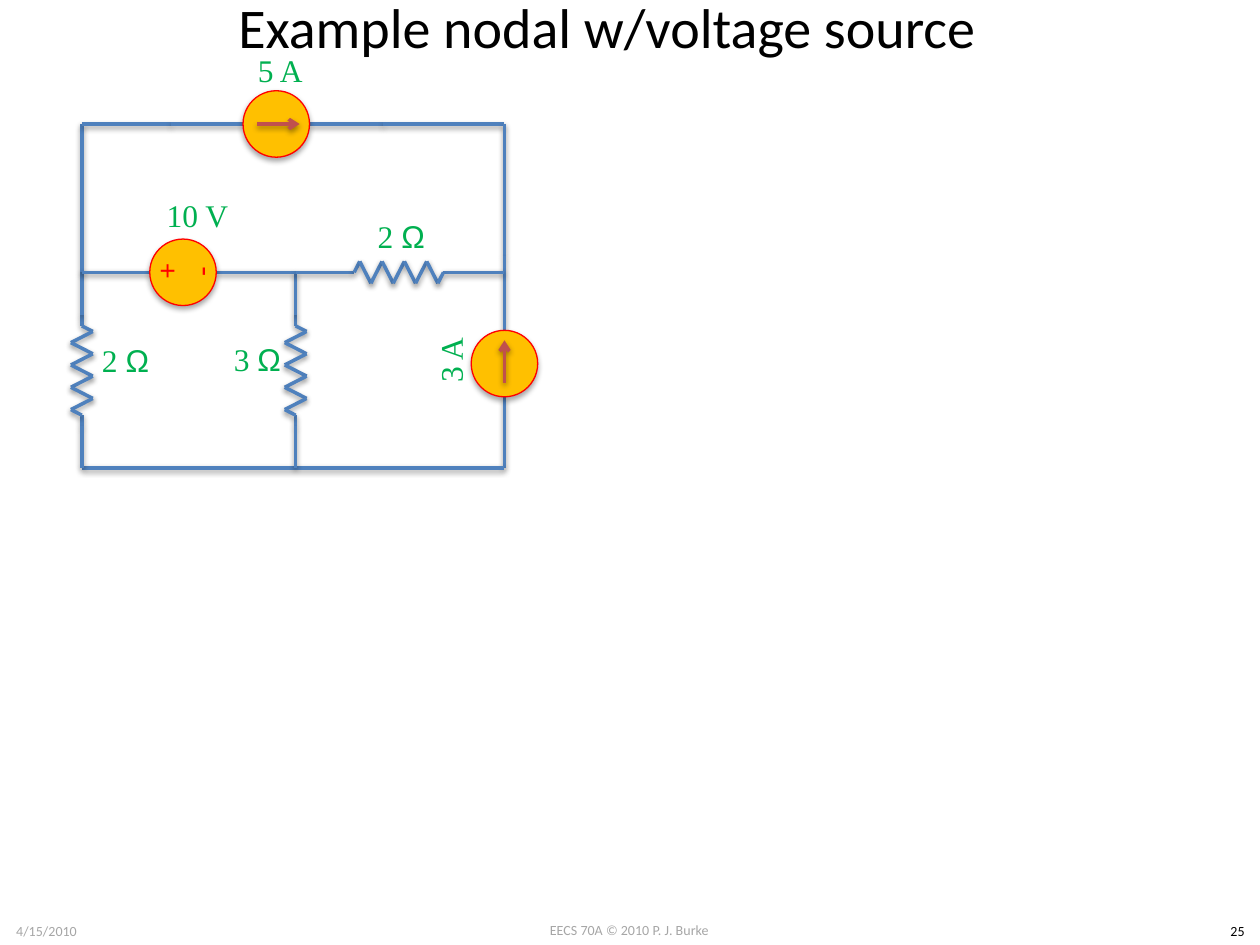
"""Build a slide showing a nodal analysis circuit with a voltage source."""
from dataclasses import dataclass
from itertools import pairwise
from typing import NamedTuple

from lxml.etree import SubElement
from pptx import Presentation
from pptx.dml.color import RGBColor
from pptx.enum.shapes import MSO_CONNECTOR, MSO_SHAPE
from pptx.enum.text import MSO_ANCHOR, PP_ALIGN
from pptx.oxml.ns import qn
from pptx.util import Cm, Pt


@dataclass(frozen=True)
class Theme:
    wire: RGBColor = RGBColor(0x4F, 0x81, 0xBD)
    arrow: RGBColor = RGBColor(0xC0, 0x50, 0x4D)
    source: RGBColor = RGBColor(0xFF, 0xC0, 0x00)
    outline: RGBColor = RGBColor(0xFF, 0x00, 0x00)
    label: RGBColor = RGBColor(0x00, 0xB0, 0x50)
    footer: RGBColor = RGBColor(0xA6, 0xA6, 0xA6)
    ink: RGBColor = RGBColor(0x00, 0x00, 0x00)
    sans: str = "Calibri"
    serif: str = "Times New Roman"
    symbol: str = "Arial"
    title_size: float = 32
    label_size: float = 18
    plus_size: float = 16.6
    footer_size: float = 8
    wire_width: float = 2
    outline_width: float = 0.75


class Point(NamedTuple):
    x: float
    y: float


class Resistor(NamedTuple):
    start: Point
    vertical: bool


class Caption(NamedTuple):
    text: str
    center: Point
    width: float
    height: float
    size: float
    font: str
    color: RGBColor
    rotation: float = 0
    unit: str = ""


THEME = Theme()
LEFT, MIDDLE, RIGHT = 1.65, 5.96, 10.17
TOP, CENTER, BOTTOM = 2.5, 5.49, 9.43
RADIUS, SWING, ZIGZAG, TEETH = 0.67, 0.22, 1.8, 8
ZIG_TOP, ZIG_LEFT, STUB = 6.57, 7.14, 0.22
ZIG_BOTTOM = ZIG_TOP + ZIGZAG

VOLTAGE = Point(3.69, CENTER)
CURRENT_TOP = Point(5.57, TOP)
CURRENT_RIGHT = Point(RIGHT, 7.33)

RESISTORS = [
    Resistor(Point(LEFT, ZIG_TOP), True),
    Resistor(Point(MIDDLE, ZIG_TOP), True),
    Resistor(Point(ZIG_LEFT, CENTER), False),
]

WIRES = [
    [Point(LEFT, ZIG_TOP), Point(LEFT, ZIG_TOP - STUB), Point(LEFT, CENTER),
     Point(LEFT, TOP), Point(3.45, TOP), Point(CURRENT_TOP.x - RADIUS, TOP)],
    [Point(CURRENT_TOP.x + RADIUS, TOP), Point(7.72, TOP), Point(RIGHT, TOP),
     Point(RIGHT, 5.16), Point(RIGHT, CURRENT_RIGHT.y - RADIUS)],
    [Point(RIGHT, CURRENT_RIGHT.y + RADIUS), Point(RIGHT, BOTTOM)],
    [Point(LEFT, BOTTOM), Point(RIGHT, BOTTOM)],
    [Point(MIDDLE, ZIG_TOP), Point(MIDDLE, ZIG_TOP - STUB), Point(MIDDLE, CENTER)],
    [Point(LEFT, CENTER), Point(VOLTAGE.x - RADIUS, CENTER)],
    [Point(VOLTAGE.x + RADIUS, CENTER), Point(MIDDLE, CENTER), Point(ZIG_LEFT, CENTER)],
    [Point(ZIG_LEFT + ZIGZAG, CENTER), Point(RIGHT, CENTER)],
    *[[Point(x, ZIG_BOTTOM), Point(x, ZIG_BOTTOM + STUB), Point(x, BOTTOM)]
      for x in (LEFT, MIDDLE)],
]


def value(text: str, x: float, y: float, unit: str = "", rotation: float = 0) -> Caption:
    """Describe the label of a circuit element."""
    return Caption(text, Point(x, y), 3.02, 1.85, THEME.label_size, THEME.serif,
                   THEME.label, rotation, unit)


def sign(text: str, x: float, size: float) -> Caption:
    """Describe a polarity sign in the voltage source."""
    return Caption(text, Point(x, 5.47), 0.66, 0.84, size, THEME.sans, THEME.outline, 270)


def footer(text: str, x: float, y: float, width: float, color: RGBColor) -> Caption:
    """Describe one entry of the footer."""
    return Caption(text, Point(x, y), width, 0.61, THEME.footer_size, THEME.sans, color)


CAPTIONS = [
    value("2 ", 2.53, 7.25, unit="Ω"),
    value("3 ", 5.19, 7.23, unit="Ω"),
    value("2 ", 8.09, 4.76, unit="Ω"),
    value("10 V", 3.98, 4.33),
    value("3 A", 9.08, 7.25, rotation=270),
    value("5 A", 5.65, 1.41),
    sign("+", 3.33, THEME.plus_size),
    sign("-", 4.04, THEME.label_size),
    footer("EECS 70A © 2010 P. J. Burke", 12.69, 18.75, 5.92, THEME.footer),
    footer("4/15/2010", 0.94, 18.77, 1.88, THEME.footer),
    footer("25", 24.95, 18.77, 0.89, THEME.ink),
]


def add_shadow(shape, distance: int, opacity: int) -> None:
    """Give a shape a soft shadow that falls straight down."""
    effects = SubElement(shape.element.spPr, qn("a:effectLst"))
    shadow = SubElement(effects, qn("a:outerShdw"), blurRad="40000", dist=str(distance),
                        dir="5400000", rotWithShape="0")
    color = SubElement(shadow, qn("a:srgbClr"), val="000000")
    SubElement(color, qn("a:alpha"), val=str(opacity))


def draw_line(page, start: Point, end: Point, color: RGBColor, arrow: bool = False) -> None:
    """Draw one straight line, with an arrowhead at its end if asked."""
    line = page.shapes.add_connector(MSO_CONNECTOR.STRAIGHT, Cm(start.x), Cm(start.y),
                                     Cm(end.x), Cm(end.y))
    line.line.color.rgb = color
    line.line.width = Pt(THEME.wire_width)
    if arrow:
        SubElement(line.line._get_or_add_ln(), qn("a:tailEnd"), type="arrow")
    add_shadow(line, 20000, 38000)


def draw_wire(page, points: list[Point]) -> None:
    """Join successive points with wire."""
    for start, end in pairwise(points):
        draw_line(page, start, end, THEME.wire)


def draw_resistor(page, resistor: Resistor) -> None:
    """Draw the zigzag of a resistor."""
    step = ZIGZAG / TEETH
    offsets = [(0, 0), *[((tooth + 0.5) * step, SWING * (-1) ** tooth)
                         for tooth in range(TEETH)], (ZIGZAG, 0)]
    x, y = resistor.start
    draw_wire(page, [Point(x + side, y + along) if resistor.vertical
                     else Point(x + along, y - side) for along, side in offsets])


def draw_source(page, center: Point) -> None:
    """Draw the circle of a source."""
    circle = page.shapes.add_shape(MSO_SHAPE.OVAL, Cm(center.x - RADIUS), Cm(center.y - RADIUS),
                                   Cm(2 * RADIUS), Cm(2 * RADIUS))
    circle.fill.solid()
    circle.fill.fore_color.rgb = THEME.source
    circle.line.color.rgb = THEME.outline
    circle.line.width = Pt(THEME.outline_width)
    add_shadow(circle, 23000, 35000)


def draw_caption(page, caption: Caption) -> None:
    """Write a caption centred on its point."""
    box = page.shapes.add_textbox(Cm(caption.center.x - caption.width / 2),
                                  Cm(caption.center.y - caption.height / 2),
                                  Cm(caption.width), Cm(caption.height))
    box.rotation = caption.rotation
    frame = box.text_frame
    frame.word_wrap = True
    frame.vertical_anchor = MSO_ANCHOR.MIDDLE
    frame.margin_left = frame.margin_right = frame.margin_top = frame.margin_bottom = 0
    para = frame.paragraphs[0]
    para.alignment = PP_ALIGN.CENTER
    para.font.size = Pt(caption.size)
    para.font.color.rgb = caption.color
    para.font.name = caption.font
    for text, font in ((caption.text, caption.font), (caption.unit, THEME.symbol)):
        if text:
            span = para.add_run()
            span.text = text
            span.font.name = font
            span.font.size = Pt(caption.size)
            span.font.color.rgb = caption.color


def write_title(page, text: str) -> None:
    """Place and format the title."""
    title = page.shapes.title
    title.left, title.top, title.width, title.height = Cm(0.81), Cm(-0.76), Cm(22.86), Cm(2.59)
    title.text_frame.text = text
    title.text_frame.vertical_anchor = MSO_ANCHOR.MIDDLE
    para = title.text_frame.paragraphs[0]
    para.alignment = PP_ALIGN.CENTER
    para.font.name = THEME.sans
    para.font.size = Pt(THEME.title_size)
    para.font.color.rgb = THEME.ink


def main() -> None:
    """Build and save the deck."""
    deck = Presentation()
    deck.slide_width, deck.slide_height = Cm(25.4), Cm(19.05)
    page = deck.slides.add_slide(deck.slide_layouts[5])
    write_title(page, "Example nodal w/voltage source")
    for points in WIRES:
        draw_wire(page, points)
    for resistor in RESISTORS:
        draw_resistor(page, resistor)
    for center in (VOLTAGE, CURRENT_TOP, CURRENT_RIGHT):
        draw_source(page, center)
    for (x, y), (across, down) in ((CURRENT_TOP, (1, 0)), (CURRENT_RIGHT, (0, -1))):
        tail, head = (Point(x + across * reach, y + down * reach) for reach in (-0.39, 0.47))
        draw_line(page, tail, head, THEME.arrow, arrow=True)
    for caption in CAPTIONS:
        draw_caption(page, caption)
    deck.save("out.pptx")


if __name__ == "__main__":
    main()
